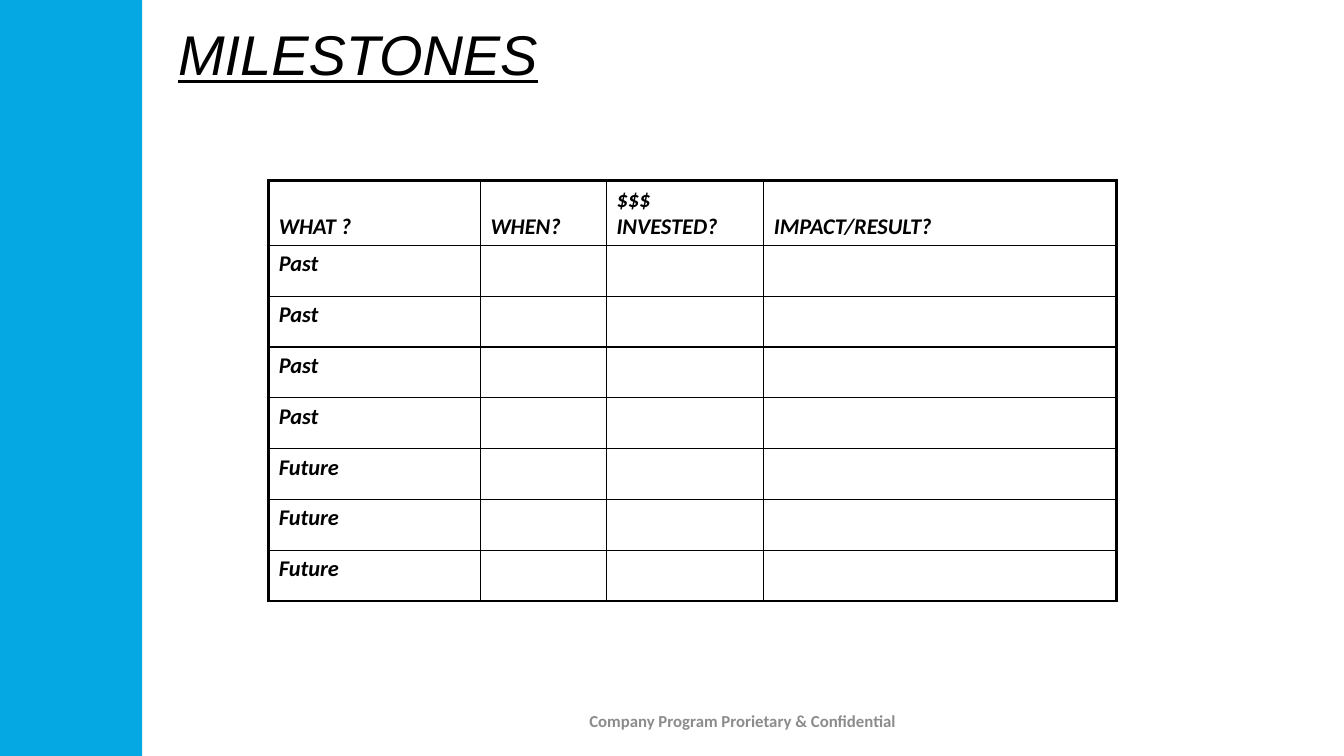
from lxml.etree import SubElement
from pptx import Presentation
from pptx.dml.color import RGBColor
from pptx.enum.shapes import MSO_SHAPE
from pptx.enum.text import MSO_ANCHOR, MSO_AUTO_SIZE, PP_ALIGN
from pptx.oxml.ns import qn
from pptx.util import Pt

COLORS = {"band": "05A8E3", "ink": "000000", "footer": "8C8C8C"}
HEADINGS = ["WHAT ?", "WHEN?", "$$$ INVESTED?", "IMPACT/RESULT?"]
STAGES = ["Past"] * 4 + ["Future"] * 3
COLUMN_WIDTHS = [151.2, 90, 112.5, 252]
HEADER_HEIGHT = 45
THIN, THICK = 1, 2.25


def color(name):
    """Return the named palette colour."""
    return RGBColor.from_string(COLORS[name])


def style(para, font_name, size, color_name, **effects):
    """Format every run of a paragraph."""
    for span in para.runs:
        span.font.name = font_name
        span.font.size = Pt(size)
        span.font.color.rgb = color(color_name)
        for effect, value in effects.items():
            setattr(span.font, effect, value)


def place(shape, box):
    """Move a shape to a box given in points."""
    shape.left, shape.top, shape.width, shape.height = map(Pt, box)


def add_band(page, box):
    """Draw the plain colour band."""
    band = page.shapes.add_shape(MSO_SHAPE.RECTANGLE, *map(Pt, box))
    band.shadow.inherit = False
    band.fill.solid()
    band.fill.fore_color.rgb = color("band")
    band.line.fill.background()


def add_title(page, box):
    """Fill and format the title placeholder."""
    title = page.shapes.title
    place(title, box)
    frame = title.text_frame
    frame.text = "MILESTONES"
    frame.auto_size = MSO_AUTO_SIZE.NONE
    frame.vertical_anchor = MSO_ANCHOR.TOP
    para = frame.paragraphs[0]
    para.alignment = PP_ALIGN.LEFT
    style(para, "Arial", 40, "ink", italic=True, underline=True)


def set_borders(cell, widths):
    """Draw the four cell borders with the given widths in points."""
    properties = cell._tc.get_or_add_tcPr()
    for position, (side, width) in enumerate(widths.items()):
        line = properties.makeelement(qn(f"a:{side}"), {"w": str(Pt(width))})
        fill = SubElement(line, qn("a:solidFill"))
        SubElement(fill, qn("a:srgbClr"), val=COLORS["ink"])
        properties.insert(position, line)


def add_milestones(page, box):
    """Build the milestone table with a heavy outer frame."""
    last_row, last_column = len(STAGES), len(HEADINGS) - 1
    table = page.shapes.add_table(last_row + 1, last_column + 1, *map(Pt, box)).table
    table.first_row = table.horz_banding = False
    for column, width in zip(table.columns, COLUMN_WIDTHS):
        column.width = Pt(width)
    for row in table.rows:
        row.height = Pt((box[3] - HEADER_HEIGHT) / last_row)
    table.rows[0].height = Pt(HEADER_HEIGHT)

    texts = [HEADINGS] + [[stage] + [""] * last_column for stage in STAGES]
    for r, row_texts in enumerate(texts):
        for c, text in enumerate(row_texts):
            cell = table.cell(r, c)
            cell.fill.background()
            cell.vertical_anchor = MSO_ANCHOR.TOP if r else MSO_ANCHOR.BOTTOM
            set_borders(cell, {
                "lnL": THIN if c else THICK,
                "lnR": THICK if c == last_column else THIN,
                "lnT": THIN if r else THICK,
                "lnB": THICK if r == last_row else THIN,
            })
            if text:
                cell.text_frame.text = text
                style(cell.text_frame.paragraphs[0], "Calibri", 16, "ink", bold=True, italic=True)


def add_footer(page, box):
    """Add the centred confidentiality line."""
    frame = page.shapes.add_textbox(*map(Pt, box)).text_frame
    frame.word_wrap = True
    frame.vertical_anchor = MSO_ANCHOR.MIDDLE
    frame.text = "Company Program Prorietary & Confidential"
    para = frame.paragraphs[0]
    para.alignment = PP_ALIGN.CENTER
    style(para, "Calibri", 12, "footer", bold=True)


def build_milestones_slide(deck):
    """Add the milestones slide to the deck."""
    page = deck.slides.add_slide(deck.slide_layouts[5])
    add_band(page, (0, 0, 101.5, 540))
    add_title(page, (120, 10, 678, 55.5))
    add_milestones(page, (192, 129, sum(COLUMN_WIDTHS), 299))
    add_footer(page, (368.5, 500.5, 324, 28.8))


def main():
    """Create and save the deck."""
    deck = Presentation()
    deck.slide_width, deck.slide_height = Pt(960), Pt(540)
    build_milestones_slide(deck)
    deck.save("out.pptx")


if __name__ == "__main__":
    main()
